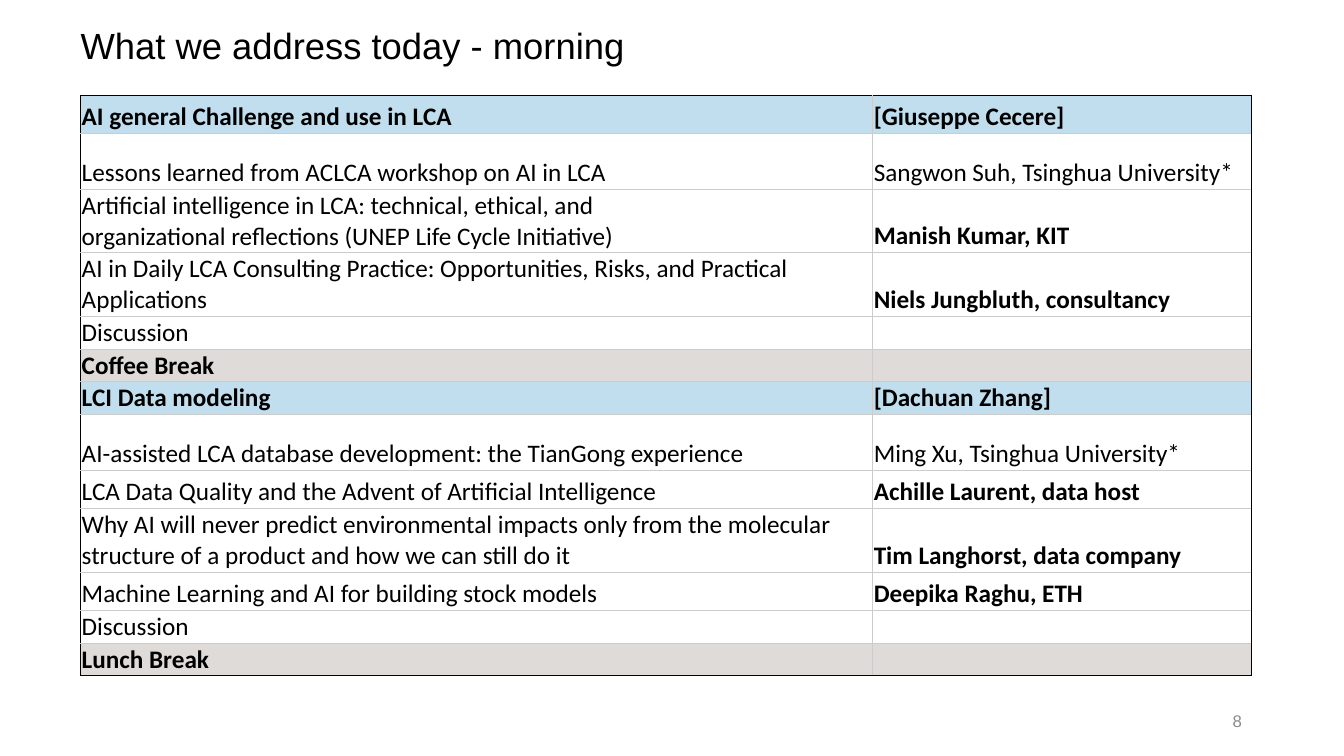
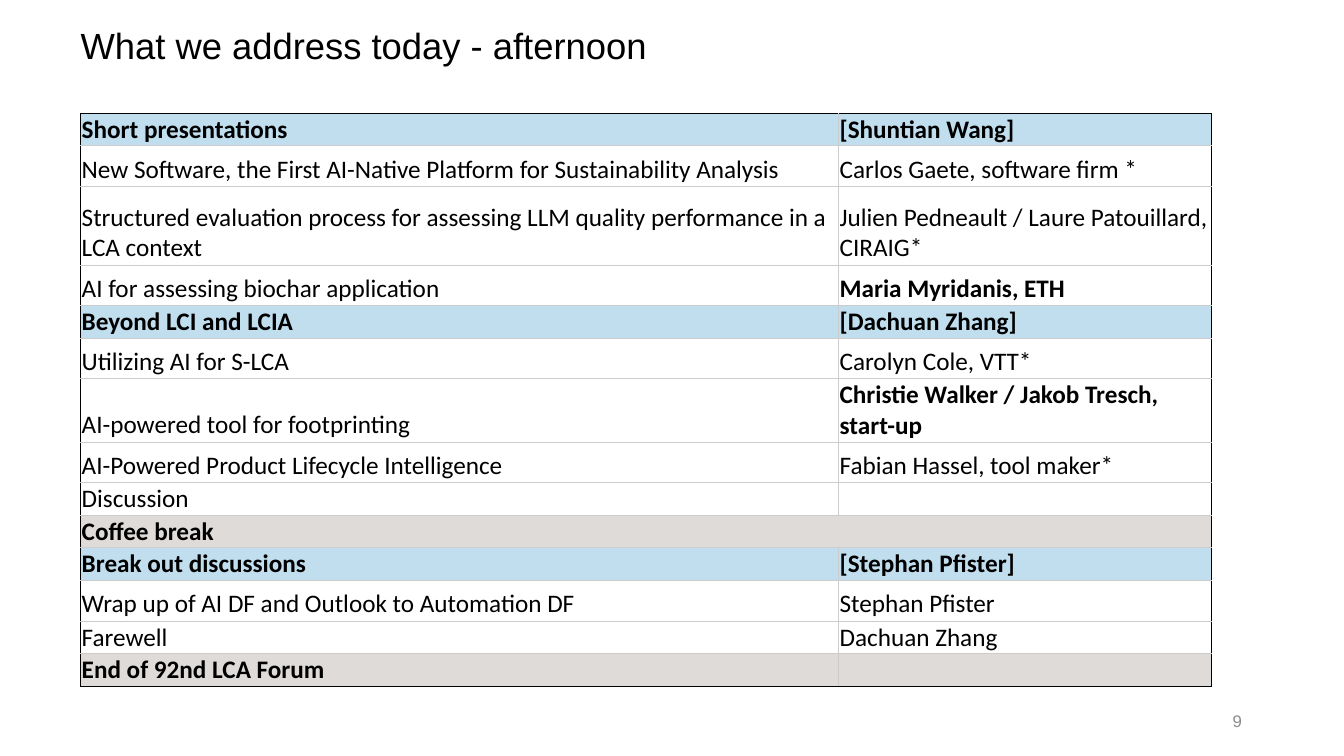
from dataclasses import dataclass

from lxml.etree import SubElement
from pptx import Presentation
from pptx.dml.color import RGBColor as Rgb
from pptx.enum.text import MSO_ANCHOR as Anchor, PP_ALIGN as Align
from pptx.oxml.ns import qn
from pptx.util import Cm, Pt


@dataclass(frozen=True)
class Theme:
    ink: str = "000000"
    paper: str = "FFFFFF"
    blue: str = "C0DEEE"
    sand: str = "DFDBD8"
    rule: str = "CCCCCC"
    mute: str = "8C8C8C"
    sans: str = "Arial"
    body: str = "Calibri"
    title: int = 26
    cell: int = 18
    foot: int = 12
    line: float = 0.5


T = Theme()
FILLS = {"head": T.blue, "rest": T.sand}
BOLD = {"head": (True, True), "rest": (True, True), "host": (False, True)}
LINE, MID, PAIR = 0.82, 1.02, 1.6
LEFT = 2.03

MORNING = [
    ("head", 0.96, "AI general Challenge and use in LCA", "[Giuseppe Cecere]"),
    ("talk", 1.42, "Lessons learned from ACLCA workshop on AI in LCA",
     "Sangwon Suh, Tsinghua University*"),
    ("host", PAIR, "Artificial intelligence in LCA: technical, ethical, and\n"
     "organizational reflections (UNEP Life Cycle Initiative)", "Manish Kumar, KIT"),
    ("host", PAIR, "AI in Daily LCA Consulting Practice: Opportunities, Risks, "
     "and Practical Applications", "Niels Jungbluth, consultancy"),
    ("talk", LINE, "Discussion", ""),
    ("rest", LINE, "Coffee Break", ""),
    ("head", LINE, "LCI Data modeling", "[Dachuan Zhang]"),
    ("talk", 1.42, "AI-assisted LCA database development: the TianGong experience",
     "Ming Xu, Tsinghua University*"),
    ("host", 0.96, "LCA Data Quality and the Advent of Artificial Intelligence",
     "Achille Laurent, data host"),
    ("host", PAIR, "Why AI will never predict environmental impacts only from the "
     "molecular structure of a product and how we can still do it",
     "Tim Langhorst, data company"),
    ("host", 0.96, "Machine Learning and AI for building stock models",
     "Deepika Raghu, ETH"),
    ("talk", LINE, "Discussion", ""),
    ("rest", LINE, "Lunch Break", ""),
]

EVENING = [
    ("head", LINE, "Short presentations", "[Shuntian Wang]"),
    ("talk", MID, "New Software, the First AI-Native Platform for Sustainability Analysis",
     "Carlos Gaete, software firm *"),
    ("talk", 1.98, "Structured evaluation process for assessing LLM quality "
     "performance in a LCA context", "Julien Pedneault / Laure Patouillard, CIRAIG*"),
    ("host", MID, "AI for assessing biochar application", "Maria Myridanis, ETH"),
    ("head", LINE, "Beyond LCI and LCIA", "[Dachuan Zhang]"),
    ("talk", MID, "Utilizing AI for S-LCA", "Carolyn Cole, VTT*"),
    ("host", PAIR, "AI-powered tool for footprinting",
     "Christie Walker / Jakob Tresch, start-up"),
    ("talk", MID, "AI-Powered Product Lifecycle Intelligence",
     "Fabian Hassel, tool maker*"),
    ("talk", LINE, "Discussion", ""),
    ("rest", LINE, "Coffee break", None),
    ("head", LINE, "Break out discussions", "[Stephan Pfister]"),
    ("talk", MID, "Wrap up of AI DF and Outlook to Automation DF", "Stephan Pfister"),
    ("talk", LINE, "Farewell", "Dachuan Zhang"),
    ("rest", LINE, "End of 92nd LCA Forum", ""),
]


def write(frame, text, size=T.cell, face=T.body, color=T.ink, bold=False,
          align=Align.LEFT, space=1.0):
    for i, part in enumerate(text.split("\n")):
        para = frame.add_paragraph() if i else frame.paragraphs[0]
        para.alignment = align
        para.line_spacing = space
        if part:
            run = para.add_run()
            run.text = part
            font = run.font
            font.size, font.name, font.bold = Pt(size), face, bold
            font.color.rgb = Rgb.from_string(color)


def label(slide, box, text, inset=0.0, anchor=Anchor.TOP, **form):
    frame = slide.shapes.add_textbox(*map(Cm, box)).text_frame
    frame.word_wrap = True
    frame.vertical_anchor = anchor
    frame.margin_left = frame.margin_right = Cm(inset)
    frame.margin_top = frame.margin_bottom = Cm(inset / 2)
    write(frame, text, **form)


def edge(cell, sides):
    props = cell._tc.get_or_add_tcPr()
    for side, outer in sides.items():
        line = SubElement(props, qn(f"a:ln{side}"), w=str(Pt(T.line)))
        fill = SubElement(line, qn("a:solidFill"))
        SubElement(fill, qn("a:srgbClr"), val=T.ink if outer else T.rule)


def agenda(slide, left, top, cols, rows):
    high = sum(row[1] for row in rows)
    table = slide.shapes.add_table(
        len(rows), len(cols), Cm(left), Cm(top), Cm(sum(cols)), Cm(high)).table
    table.first_row = table.horz_banding = False
    for col, wide in zip(table.columns, cols):
        col.width = Cm(wide)
    for r, (kind, tall, *texts) in enumerate(rows):
        table.rows[r].height = Cm(tall)
        whole = texts[1] is None
        if whole:
            table.cell(r, 0).merge(table.cell(r, 1))
        for c, text in enumerate(texts):
            cell = table.cell(r, c)
            cell.vertical_anchor = Anchor.BOTTOM
            cell.margin_left = cell.margin_right = Cm(0.03)
            cell.margin_top = cell.margin_bottom = Cm(0.03)
            edge(cell, {"L": c == 0, "R": c == 1 or whole,
                        "T": r == 0, "B": r == len(rows) - 1})
            cell.fill.solid()
            cell.fill.fore_color.rgb = Rgb.from_string(FILLS.get(kind, T.paper))
            if text is not None:
                write(cell.text_frame, text, bold=BOLD.get(kind, (False, False))[c])


def page(deck, part, number, top, cols, rows):
    slide = deck.slides.add_slide(deck.slide_layouts[6])
    label(slide, (LEFT, 0.71, 29.8, 1.5), f"What we address today - {part}",
          size=T.title, face=T.sans, space=0.9)
    agenda(slide, LEFT, top, cols, rows)
    label(slide, (23.93, 17.65, 7.62, 1.02), str(number), inset=0.25,
          anchor=Anchor.MIDDLE, size=T.foot, face=T.sans, color=T.mute,
          align=Align.RIGHT)


def main():
    deck = Presentation()
    deck.slide_width, deck.slide_height = Cm(33.87), Cm(19.05)
    page(deck, "morning", 8, 2.39, (19.96, 9.54), MORNING)
    page(deck, "afternoon", 9, 2.85, (19.1, 9.4), EVENING)
    deck.save("out.pptx")


if __name__ == "__main__":
    main()
